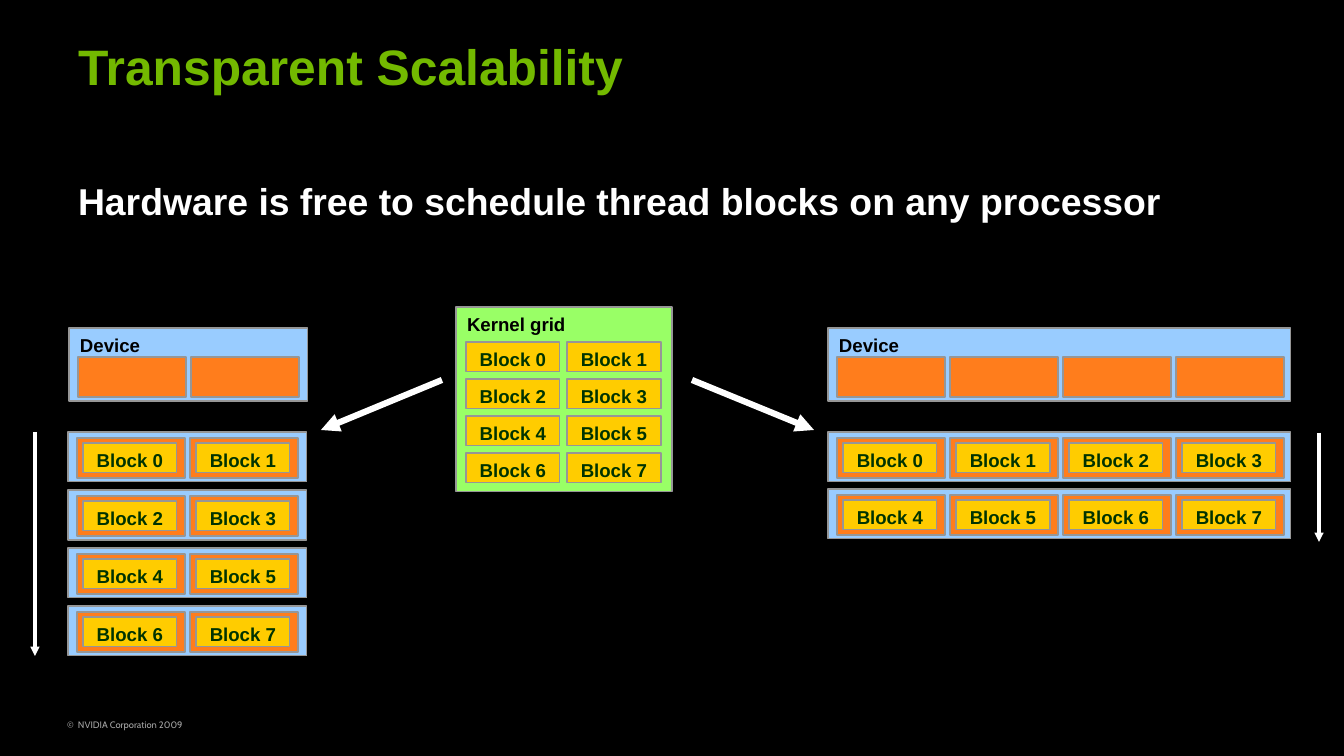
from lxml import etree
from pptx import Presentation
from pptx import util as u
from pptx.dml.color import RGBColor
from pptx.enum import shapes, text
from pptx.oxml.ns import qn

SCALE = 914400 / 112
HUES = {
    "back": "000000", "title": "73B900", "white": "FFFFFF", "foot": "A6A6A6",
    "device": "99CCFF", "core": "FF7D1C", "block": "FFCC00", "grid": "99FF66",
    "edge": "969696", "label": "000000", "ink": "003300",
}
TOP, MID, LOW = (text.MSO_ANCHOR.TOP, text.MSO_ANCHOR.MIDDLE,
                 text.MSO_ANCHOR.BOTTOM)


def px(*sizes):
    return [u.Emu(round(size * SCALE)) for size in sizes]


def color(name):
    return RGBColor.from_string(HUES[name])


def write(shape, words, size, hue, anchor=TOP, face="Arial", bold=True,
          wrap=True, align=text.PP_ALIGN.LEFT):
    frame = shape.text_frame
    frame.text = words
    frame.word_wrap = wrap
    frame.vertical_anchor = anchor
    para = frame.paragraphs[0]
    para.alignment = align
    font = para.runs[0].font
    font.name, font.size, font.bold = face, u.Pt(size), bold
    font.color.rgb = color(hue)


def note(parent, place, words, size, hue, **style):
    write(parent.add_textbox(*px(*place)), words, size, hue, **style)


def box(parent, place, hue):
    rect = parent.add_shape(shapes.MSO_SHAPE.RECTANGLE, *px(*place))
    rect.shadow.inherit = False
    rect.fill.solid()
    rect.fill.fore_color.rgb = color(hue)
    rect.line.color.rgb = color("edge")
    rect.line.width = u.Pt(0.75)
    return rect


def panel(parent, place, hue, label):
    write(box(parent, place, hue), label, 12, "label")


def block(parent, x, y, index):
    write(box(parent, (x, y, 94, 30), "block"), f"Block {index}", 12, "ink",
          wrap=False, align=text.PP_ALIGN.CENTER)


def core(parent, x, y):
    box(parent, (x, y, 108, 40), "core")


def arrow(parent, ends, width):
    line = parent.add_connector(shapes.MSO_CONNECTOR.STRAIGHT, *px(*ends))
    line.line.color.rgb = color("white")
    line.line.width = u.Pt(width)
    etree.SubElement(line.line._get_or_add_ln(), qn("a:tailEnd"),
                     type="triangle")
    etree.SubElement(line._element.spPr, qn("a:effectLst"))


def device(parent, x, left, cols, pitch, ends):
    group = parent.add_group_shape().shapes
    wide = cols * 112 + 15
    panel(group, (x, 328, wide, 73), "device", "Device")
    for col in range(cols):
        core(group, x + 9 + col * 113, 357)
    for row in range(8 // cols):
        y = 432 + row * pitch
        box(group, (left, y, wide, 50), "device")
        for col in range(cols):
            spot = left + 9 + col * 113
            core(group, spot, y + 6)
            block(group, spot + 6, y + 11, row * cols + col)
    arrow(group, ends, 2)


def kernel(parent):
    group = parent.add_group_shape().shapes
    panel(group, (456, 307, 216, 185), "grid", "Kernel grid")
    for index in range(8):
        row, col = divmod(index, 2)
        block(group, 466 + col * 101, 342 + row * 37, index)


def main():
    deck = Presentation()
    deck.slide_width, deck.slide_height = px(1344, 756)
    slide = deck.slides.add_slide(deck.slide_layouts[6])
    fill = slide.background.fill
    fill.solid()
    fill.fore_color.rgb = color("back")
    parts = slide.shapes

    note(parts, (56, 714, 252, 22), "©  NVIDIA Corporation 2009", 6, "foot",
         anchor=MID, face="Cabin", bold=False)
    note(parts, (67, 30, 1128, 71), "Transparent Scalability", 32, "title",
         anchor=LOW)
    note(parts, (67, 173, 1210, 56),
         "Hardware is free to schedule thread blocks on any processor",
         24, "white", anchor=LOW)

    device(parts, 69, 68, 2, 58, (35, 432, 35, 656))
    kernel(parts)
    device(parts, 828, 828, 4, 57, (1319, 433, 1319, 542))
    arrow(parts, (442, 380, 321, 430), 4)
    arrow(parts, (692, 380, 814, 430), 4)
    deck.save("out.pptx")


if __name__ == "__main__":
    main()
